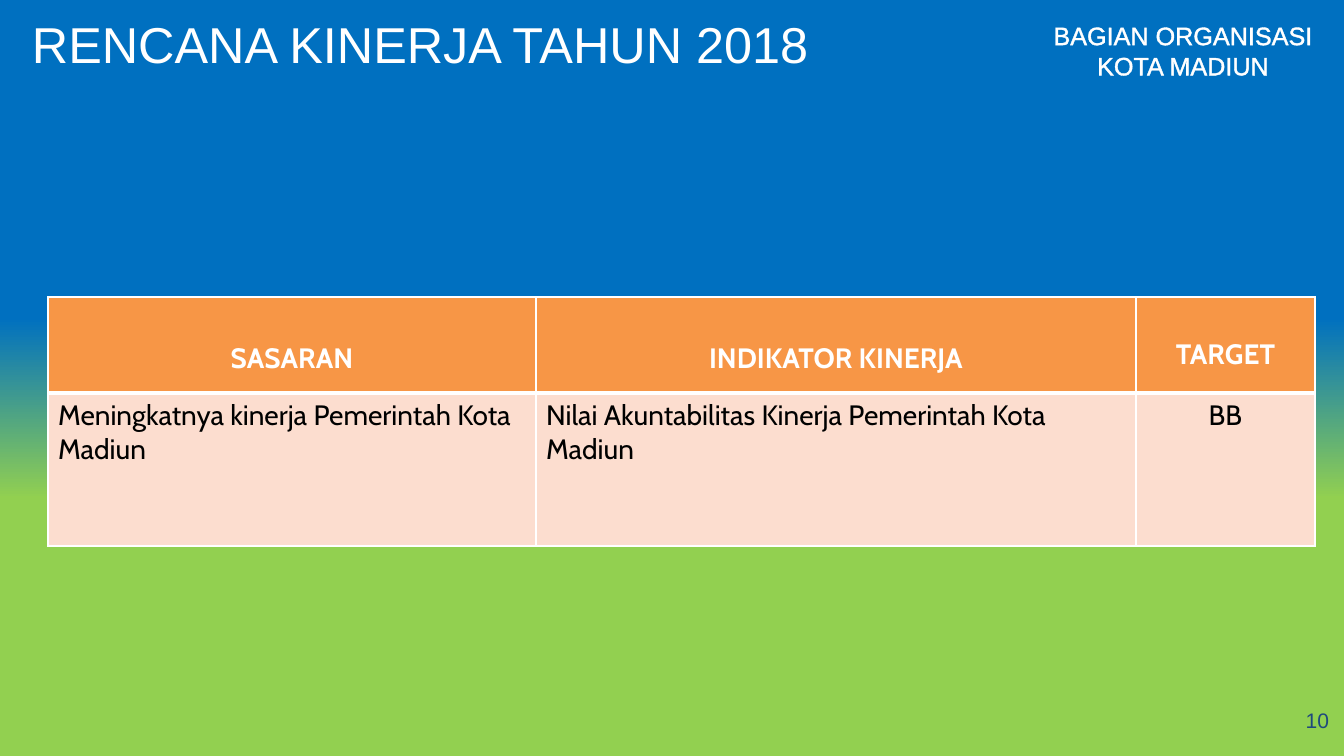
from copy import deepcopy
from dataclasses import dataclass

from lxml.etree import SubElement
from pptx import Presentation
from pptx.dml.color import RGBColor
from pptx.enum.text import MSO_ANCHOR, PP_ALIGN
from pptx.oxml.ns import qn
from pptx.slide import Slide
from pptx.table import _Cell as Cell
from pptx.util import Emu, Pt

EMU_PER_PX = 914400 / 100.8

WHITE = RGBColor(0xFF, 0xFF, 0xFF)
BLACK = RGBColor(0x00, 0x00, 0x00)
BLUE = RGBColor(0x00, 0x70, 0xC0)
GREEN = RGBColor(0x92, 0xD0, 0x50)
NAVY = RGBColor(0x1F, 0x49, 0x7D)
ORANGE = RGBColor(0xF7, 0x96, 0x46)
PEACH = RGBColor(0xFC, 0xDD, 0xCF)

BACKGROUND_STOPS = [(8, BLUE), (20, BLUE), (42, BLUE), (66, GREEN)]
TABLE_LEFT, TABLE_TOP = 48, 297
HEADER_HEIGHT, BODY_HEIGHT = 96, 153


@dataclass
class Label:
    text: str
    left: int
    top: int
    width: int
    height: int
    size: int
    color: RGBColor
    align: PP_ALIGN = PP_ALIGN.LEFT
    anchor: MSO_ANCHOR = MSO_ANCHOR.TOP
    wrap: bool = True
    outline: float = 0


@dataclass
class Column:
    heading: str
    value: str
    width: int
    heading_inset: int
    value_align: PP_ALIGN = PP_ALIGN.LEFT


LABELS = [
    Label("RENCANA KINERJA TAHUN 2018", 22, 8, 804, 72, 36, WHITE, wrap=False),
    Label("BAGIAN ORGANISASI\nKOTA MADIUN", 1008, 15, 350, 72, 18, WHITE,
          PP_ALIGN.CENTER, outline=1.45),
    Label("10", 1026, 700, 313, 40, 15, NAVY, PP_ALIGN.RIGHT, MSO_ANCHOR.MIDDLE),
]

COLUMNS = [
    Column("SASARAN", "Meningkatnya kinerja Pemerintah Kota Madiun", 488, 44),
    Column("INDIKATOR KINERJA",
           "Nilai Akuntabilitas Kinerja Pemerintah Kota Madiun", 600, 44),
    Column("TARGET", "BB", 179, 40, PP_ALIGN.CENTER),
]


def px(length: int) -> Emu:
    return Emu(round(length * EMU_PER_PX))


def add_solid_fill(line, color: RGBColor) -> None:
    SubElement(SubElement(line, qn("a:solidFill")), qn("a:srgbClr"), val=str(color))


def paint_background(slide: Slide) -> None:
    fill = slide.background.fill
    fill.gradient()
    fill.gradient_angle = 270
    stop_list = slide.element.find(".//" + qn("a:gsLst"))
    while len(stop_list) < len(BACKGROUND_STOPS):
        stop_list.append(deepcopy(stop_list[0]))
    for stop, (percent, color) in zip(fill.gradient_stops, BACKGROUND_STOPS):
        stop.color.rgb = color
        stop.position = percent / 100


def add_label(slide: Slide, label: Label) -> None:
    box = slide.shapes.add_textbox(
        px(label.left), px(label.top), px(label.width), px(label.height))
    frame = box.text_frame
    frame.word_wrap = label.wrap
    frame.vertical_anchor = label.anchor
    frame.text = label.text
    for paragraph in frame.paragraphs:
        paragraph.alignment = label.align
        for run in paragraph.runs:
            run.font.name = "Arial"
            run.font.size = Pt(label.size)
            run.font.color.rgb = label.color
            if label.outline:
                properties = run.font._element
                line = SubElement(properties, qn("a:ln"), w=str(Pt(label.outline)))
                add_solid_fill(line, label.color)
                properties.insert(0, line)


def style_cell(cell: Cell, text: str, align: PP_ALIGN, color: RGBColor,
               background: RGBColor, bold: bool, top: int, bottom: int) -> None:
    cell.text = text
    paragraph = cell.text_frame.paragraphs[0]
    paragraph.alignment = align
    font = paragraph.runs[0].font
    font.name, font.size, font.bold = "Cabin", Pt(20), bold
    font.color.rgb = color
    # Borders stand before the fill in the cell properties
    properties = cell._tc.get_or_add_tcPr()
    for side, width in {"L": 1, "R": 1, "T": top, "B": bottom}.items():
        line = SubElement(properties, qn(f"a:ln{side}"), w=str(Pt(width)))
        add_solid_fill(line, WHITE)
    cell.fill.solid()
    cell.fill.fore_color.rgb = background


def add_plan_table(slide: Slide) -> None:
    plan = slide.shapes.add_table(
        2, len(COLUMNS), px(TABLE_LEFT), px(TABLE_TOP),
        px(sum(column.width for column in COLUMNS)),
        px(HEADER_HEIGHT + BODY_HEIGHT)).table
    plan.horz_banding = False
    plan.rows[0].height = px(HEADER_HEIGHT)
    plan.rows[1].height = px(BODY_HEIGHT)
    for index, column in enumerate(COLUMNS):
        plan.columns[index].width = px(column.width)
        heading, value = plan.cell(0, index), plan.cell(1, index)
        style_cell(heading, column.heading, PP_ALIGN.CENTER, WHITE, ORANGE,
                   bold=True, top=1, bottom=3)
        heading.margin_top = px(column.heading_inset)
        style_cell(value, column.value, column.value_align, BLACK, PEACH,
                   bold=False, top=3, bottom=1)


def main() -> None:
    presentation = Presentation()
    presentation.slide_width = px(1344)
    presentation.slide_height = px(756)
    slide = presentation.slides.add_slide(presentation.slide_layouts[6])
    paint_background(slide)
    # Title, office name and page number
    for label in LABELS:
        add_label(slide, label)
    # Performance plan
    add_plan_table(slide)
    presentation.save("out.pptx")


if __name__ == "__main__":
    main()
